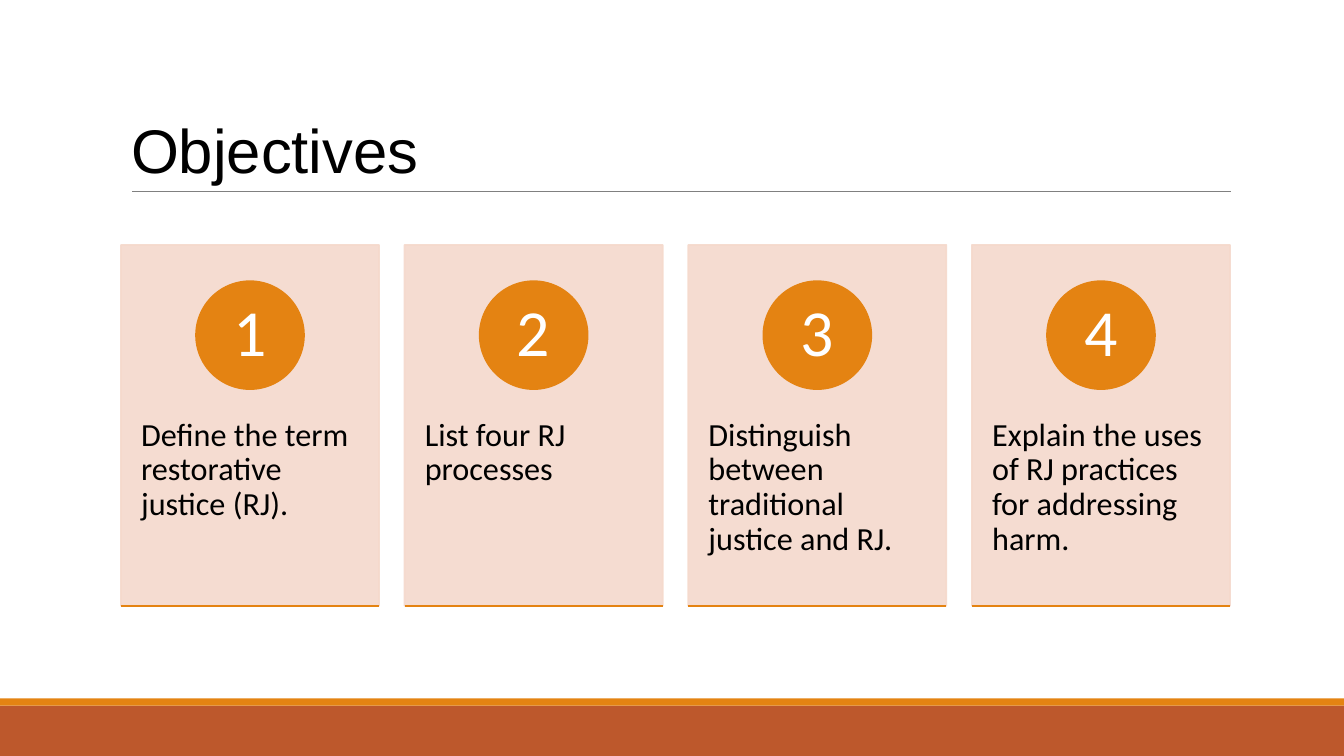
from lxml import etree
from pptx import Presentation
from pptx.dml.color import RGBColor
from pptx.enum import shapes, text
from pptx.oxml.ns import qn
from pptx.util import Inches, Pt

ORANGE, RUST, PINK = "E48312", "BD582C", "F5D9CC"
GOALS = [
    "Define the term restorative justice (RJ).",
    "List four RJ processes",
    "Distinguish between traditional justice and RJ.",
    "Explain the uses of RJ practices for addressing harm.",
]


def paint(fmt, color, alpha=None):
    """Give a fill a solid hex colour and, if asked, an opacity in percent."""
    fmt.solid()
    fmt.fore_color.rgb = RGBColor.from_string(color)
    if alpha:
        for clr in fmt._xPr.iter(qn("a:srgbClr")):
            etree.SubElement(clr, qn("a:alpha")).set("val", str(alpha * 1000))


def block(slide, kind, box, color, width=0, alpha=None):
    """Add a filled shape, outlined in its own colour if width is given."""
    shape = slide.shapes.add_shape(kind, *map(Inches, box))
    shape.shadow.inherit = False
    paint(shape.fill, color, alpha)
    if width:
        shape.line.width = Pt(width)
        paint(shape.line.fill, color, alpha)
    else:
        shape.line.fill.background()
    return shape


def rule(slide, x, y, w, color, width):
    """Add a level line."""
    line = slide.shapes.add_connector(
        shapes.MSO_CONNECTOR.STRAIGHT, *map(Inches, (x, y, x + w, y)))
    etree.SubElement(line._element.spPr, qn("a:effectLst"))
    line.line.width = Pt(width)
    paint(line.line.fill, color)


def write(shape, words, size, font, color, align, anchor, pads, space):
    """Fill a shape with one formatted paragraph."""
    frame = shape.text_frame
    frame.text = words
    frame.word_wrap = True
    frame.auto_size = text.MSO_AUTO_SIZE.NONE
    frame.vertical_anchor = anchor
    frame.margin_left = frame.margin_right = Inches(pads[0])
    frame.margin_top = frame.margin_bottom = Inches(pads[1])
    para = frame.paragraphs[0]
    para.alignment = align
    para.line_spacing = space
    run = para.runs[0].font
    run.size, run.name = Pt(size), font
    paint(run.fill, color)


def header(slide, x, y, w, h):
    """Place the title and the line below it."""
    title = slide.shapes.title
    title.left, title.top, title.width, title.height = map(Inches, (x, y, w, h))
    write(title, "Objectives", 44, "Arial", "000000", text.PP_ALIGN.LEFT,
          text.MSO_ANCHOR.BOTTOM, (0.1, 0.05), 0.85)
    rule(slide, x + 0.11, y + h, w - 0.1, "808080", 0.5)


def card(slide, x, y, w, h, num, goal):
    """Draw one numbered objective."""
    block(slide, shapes.MSO_SHAPE.RECTANGLE, (x, y, w, h), PINK, 1.25, 90)
    note = slide.shapes.add_textbox(*map(Inches, (x, y + 1.36, w, 2.15)))
    write(note, goal, 23, "Calibri", "000000", text.PP_ALIGN.LEFT,
          text.MSO_ANCHOR.TOP, (0.2, 0.36), 0.9)
    size = 1.07
    disc = block(slide, shapes.MSO_SHAPE.OVAL,
                 (x + (w - size) / 2, y + 0.36, size, size), ORANGE, 1.25)
    write(disc, str(num), 47, "Calibri", "FFFFFF", text.PP_ALIGN.CENTER,
          text.MSO_ANCHOR.MIDDLE, (0, 0), 0.9)
    rule(slide, x, y + h, w, ORANGE, 1.25)


def cards(slide, x, y, w, h):
    """Spread the objectives evenly across a box."""
    wide = 2.56
    step = (w - wide) / (len(GOALS) - 1)
    for i, goal in enumerate(GOALS):
        card(slide, x + i * step, y, wide, h, i + 1, goal)


def footer(slide, x, y, w, h):
    """Draw the two bands at the foot."""
    thin = 0.07
    block(slide, shapes.MSO_SHAPE.RECTANGLE, (x, y + thin, w, h - thin), RUST)
    block(slide, shapes.MSO_SHAPE.RECTANGLE, (x, y, w, thin), ORANGE)


def main():
    """Build and save the slide."""
    deck = Presentation()
    deck.slide_width, deck.slide_height = Inches(13.33), Inches(7.5)
    slide = deck.slides.add_slide(deck.slide_layouts[5])
    footer(slide, 0, 6.93, 13.33, 0.57)
    header(slide, 1.2, 0.31, 11, 1.59)
    cards(slide, 1.2, 2.43, 11, 3.58)
    deck.save("out.pptx")


if __name__ == "__main__":
    main()
